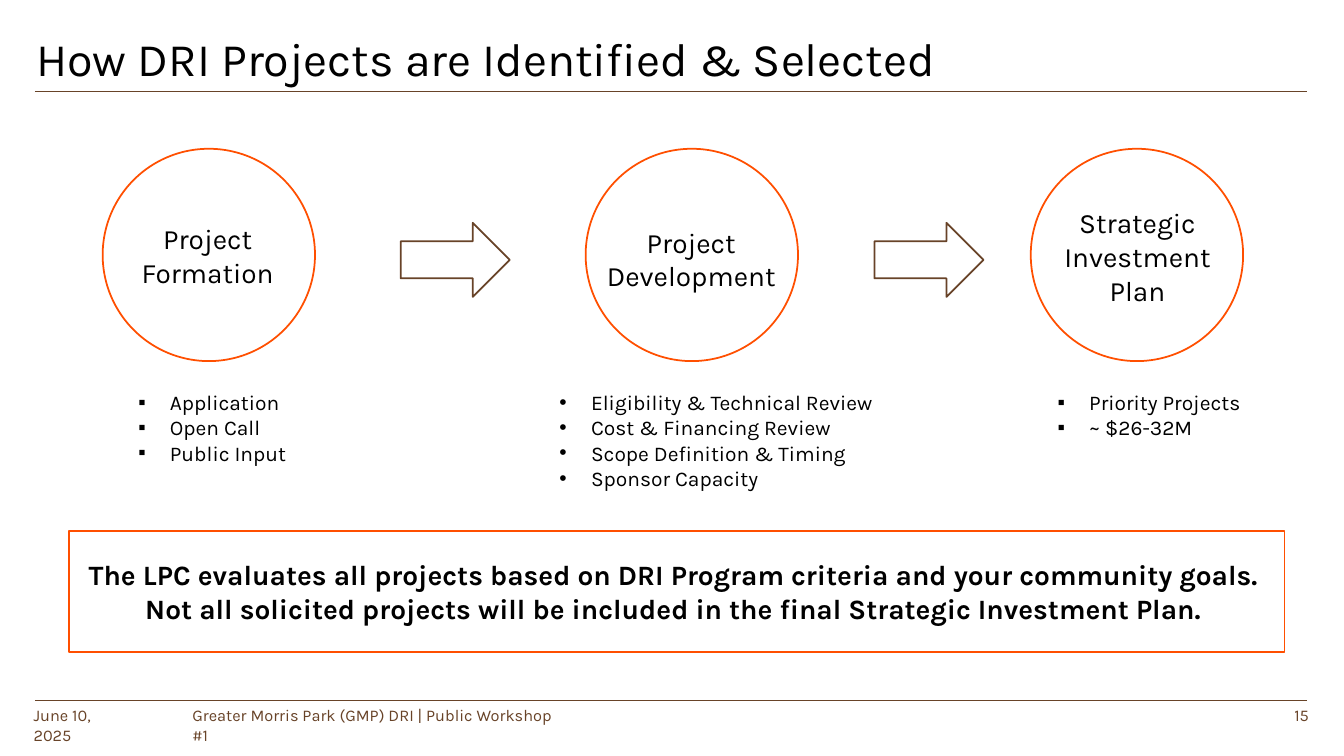
from lxml import etree
from pptx import Presentation
from pptx import util as u
from pptx.dml.color import RGBColor
from pptx.enum import shapes, text
from pptx.oxml import ns

Pt = u.Pt
COLOURS = {"ink": "000000", "orange": "FF4F00", "brown": "684328", "white": "FFFFFF"}
FONT = "Karla"
CIRCLE_TOP, CIRCLE_SIZE, LIST_TOP = 127.5, 182, 330.5

STAGES = [
    {"circle": 88, "label": (93.5, 186.5, 169, 65.5), "name": ["Project", "Formation"],
     "list": (111.5, 182), "bullet": "▪",
     "items": ["Application", "Open Call", "Public Input"]},
    {"circle": 502, "label": (486, 189.5, 213, 65.5), "name": ["Project Development"],
     "list": (472.5, 309.5), "bullet": "•",
     "items": ["Eligibility & Technical Review", "Cost & Financing Review",
               "Scope Definition & Timing", "Sponsor Capacity"]},
    {"circle": 883.5, "label": (890.5, 173, 169, 94.5), "name": ["Strategic Investment Plan"],
     "list": (899.5, 206), "bullet": "▪",
     "items": ["Priority Projects", "~ $26-32M"]},
]
CRITERIA = [
    "The LPC evaluates all projects based on DRI Program criteria and your community goals. ",
    "Not all solicited projects will be included in the final Strategic Investment Plan. ",
]


def colour(name):
    """Return the named colour."""
    return RGBColor.from_string(COLOURS[name])


def add_bullet(para, symbol, indent=27):
    """Give a paragraph a hanging bullet."""
    props = para._p.get_or_add_pPr()
    props.set("marL", str(Pt(indent)))
    props.set("indent", str(-Pt(indent)))
    etree.SubElement(props, ns.qn("a:buFont")).set("typeface", "Arial")
    etree.SubElement(props, ns.qn("a:buChar")).set("char", symbol)


def write(box, lines, size=24, tone="ink", bold=False, align="LEFT", anchor="TOP",
          margin=7.2, bullet=None):
    """Fill a box with one formatted paragraph per line."""
    frame = box.text_frame
    frame.word_wrap = True
    frame.vertical_anchor = getattr(text.MSO_ANCHOR, anchor)
    frame.margin_left = frame.margin_right = Pt(margin)
    frame.margin_top = frame.margin_bottom = Pt(3.6)
    for index, line in enumerate(lines):
        para = frame.add_paragraph() if index else frame.paragraphs[0]
        para.alignment = getattr(text.PP_ALIGN, align)
        if bullet:
            add_bullet(para, bullet)
        span = para.add_run()
        span.text = line
        span.font.name = FONT
        span.font.size = Pt(size)
        span.font.bold = bold
        span.font.color.rgb = colour(tone)


def add_text(page, place, lines, **style):
    """Add a text box at a left, top, width and height."""
    box = page.shapes.add_textbox(*map(Pt, place))
    write(box, lines, **style)


def add_outline(page, kind, place, tone, fill=None):
    """Add an outlined preset shape."""
    box = page.shapes.add_shape(getattr(shapes.MSO_SHAPE, kind), *map(Pt, place))
    box.shadow.inherit = False
    if fill:
        box.fill.solid()
        box.fill.fore_color.rgb = colour(fill)
    else:
        box.fill.background()
    box.line.color.rgb = colour(tone)
    box.line.width = Pt(1.5)
    return box


def add_rule(page, top):
    """Add a thin rule across the page."""
    rule = page.shapes.add_connector(
        shapes.MSO_CONNECTOR.STRAIGHT, Pt(30), Pt(top), Pt(1120.5), Pt(top))
    rule.line.color.rgb = colour("brown")
    rule.line.width = Pt(0.75)
    etree.SubElement(rule._element.spPr, ns.qn("a:effectLst"))


def add_stage(page, stage):
    """Add a stage's circle, label and bullet list."""
    add_outline(page, "OVAL", (stage["circle"], CIRCLE_TOP, CIRCLE_SIZE, CIRCLE_SIZE), "orange")
    add_text(page, stage["label"], stage["name"], align="CENTER")
    left, width = stage["list"]
    height = 7.2 + 21.6 * len(stage["items"])
    add_text(page, (left, LIST_TOP, width, height), stage["items"], size=18,
             bullet=stage["bullet"])


def add_footer(page):
    """Add the rule, date, event and page number at the foot."""
    add_rule(page, 600.5)
    small = {"size": 14, "tone": "brown"}
    add_text(page, (25.2, 601.2, 88, 24.5), ["June 10, 2025"], margin=3.6, **small)
    add_text(page, (161.3, 601.2, 326, 24.5),
             ["Greater Morris Park (GMP) DRI | Public Workshop #1"], margin=3.6, **small)
    add_text(page, (1057, 601.2, 72, 24.5), ["15"], align="RIGHT", **small)


def main():
    """Build and save the slide."""
    deck = Presentation()
    deck.slide_width, deck.slide_height = Pt(1152), Pt(648)
    page = deck.slides.add_slide(deck.slide_layouts[6])
    add_footer(page)
    add_text(page, (24, 22.3, 929.5, 55.5), ["How DRI Projects are Identified & Selected"], size=40)
    add_rule(page, 78.5)
    for stage in STAGES:
        add_stage(page, stage)
    for left in (343.5, 749.5):
        add_outline(page, "RIGHT_ARROW", (left, 191, 93.5, 63.5), "brown", fill="white")
    callout = add_outline(page, "RECTANGLE", (59, 455, 1042, 103.7), "orange")
    write(callout, CRITERIA, bold=True, align="CENTER", anchor="MIDDLE")
    deck.save("out.pptx")


if __name__ == "__main__":
    main()
